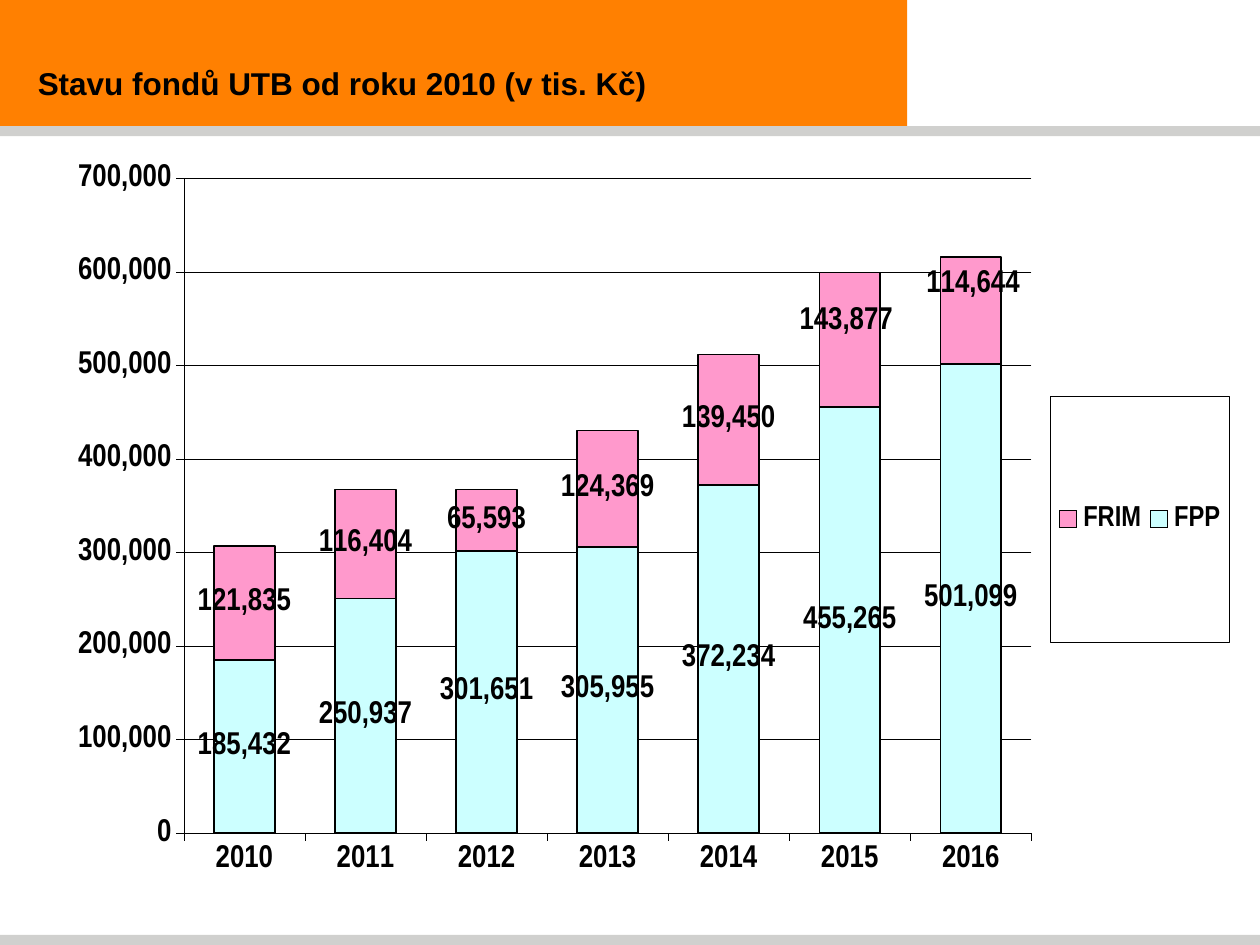
from lxml import etree
from pptx import Presentation
from pptx.chart.data import CategoryChartData
from pptx.dml.color import RGBColor
from pptx.enum import chart as ch, shapes, text
from pptx.oxml import parse_xml
from pptx.oxml.ns import nsdecls
from pptx.util import Inches, Pt

HUES = {"orange": "FF8001", "grey": "D0D0CE", "black": "000000",
        "aqua": "CCFFFF", "pink": "FF99CC"}


def style(font, size, name="Arial Narrow"):
    font.size, font.name, font.bold = Pt(size), name, True
    font.color.rgb = RGBColor.from_string(HUES["black"])


def layout(x, y, w=None, h=None, inner=False):
    """Manual chart layout; without a size, x and y are offsets."""
    tags = [("layoutTarget", "inner")] if inner else []
    if w:
        tags += [("xMode", "edge"), ("yMode", "edge")]
    tags += [("x", x), ("y", y)]
    if w:
        tags += [("w", w), ("h", h)]
    body = "".join(f'<c:{tag} val="{val}"/>' for tag, val in tags)
    return parse_xml(f'<c:layout {nsdecls("c")}><c:manualLayout>{body}'
                     '</c:manualLayout></c:layout>')


prs = Presentation()
prs.slide_width, prs.slide_height = Inches(10), Inches(7.5)
slide = prs.slides.add_slide(prs.slide_layouts[6])

# Header block and grey rules
for top, wide, high, hue in [(0, 7.2, 1, "orange"), (7.42, 10, 0.08, "grey"),
                             (1, 10, 0.08, "grey")]:
    bar = slide.shapes.add_shape(shapes.MSO_SHAPE.RECTANGLE, 0, Inches(top),
                                 Inches(wide), Inches(high))
    bar.shadow.inherit = False
    bar.fill.solid()
    bar.fill.fore_color.rgb = RGBColor.from_string(HUES[hue])
    bar.line.fill.background()

# Title
box = slide.shapes.add_textbox(0, Inches(0.32), Inches(7.2), Inches(0.68))
frame = box.text_frame
frame.word_wrap = True
frame.vertical_anchor = text.MSO_ANCHOR.MIDDLE
frame.margin_left = Inches(0.3)
frame.text = "Stavu fondů UTB od roku 2010 (v tis. Kč)"
style(frame.paragraphs[0].runs[0].font, 18, "Arial")

# Stacked column chart
data = CategoryChartData(number_format="#,##0")
data.categories = [str(year) for year in range(2010, 2017)]
data.add_series("FPP", [185432, 250937, 301651, 305955, 372234, 455265, 501099])
data.add_series("FRIM", [121835, 116404, 65593, 124369, 139450, 143877, 114644])
chart = slide.shapes.add_chart(
    ch.XL_CHART_TYPE.COLUMN_STACKED, Inches(0.48), Inches(1.3),
    Inches(9.42), Inches(5.95), data).chart
chart.has_title = False
style(chart.font, 18)
area = chart._chartSpace.chart.plotArea
for old in area.findall("{*}layout"):
    area.remove(old)
area.insert(0, layout(0.104, 0.019, 0.714, 0.874, inner=True))

# Axes
vals, cats = chart.value_axis, chart.category_axis
vals.minimum_scale, vals.maximum_scale, vals.major_unit = 0, 700000, 100000
vals.has_major_gridlines = True
vals.tick_labels.number_format = "#,##0"
vals.tick_labels.number_format_is_linked = False
cats.tick_label_position = ch.XL_TICK_LABEL_POSITION.LOW
for axis in (vals, cats):
    axis.major_tick_mark = ch.XL_TICK_MARK.OUTSIDE
    style(axis.tick_labels.font, 18)
for line in (vals.format.line, cats.format.line, vals.major_gridlines.format.line):
    line.width = Pt(0.25)
    line.color.rgb = RGBColor.from_string(HUES["black"])

# Series and value labels
plot = chart.plots[0]
plot.gap_width, plot.overlap, plot.vary_by_categories = 100, 100, False
for series, hue in zip(plot.series, ("aqua", "pink")):
    series.format.fill.solid()
    series.format.fill.fore_color.rgb = RGBColor.from_string(HUES[hue])
    series.format.line.width = Pt(1)
    series.format.line.color.rgb = RGBColor.from_string(HUES["black"])
    labels = series.data_labels
    labels.show_value = True
    labels.number_format, labels.number_format_is_linked = "#,##0", False
    style(labels.font, 18)

# The last two upper labels are raised
frim = plot.series[1]
for spot, x, y in [(5, -0.003, -0.025), (6, 0.002, -0.035)]:
    label = frim.points[spot].data_label
    style(label.font, 18)
    node = frim.data_labels._element.findall("{*}dLbl")[spot - 5]
    node.insert(1, layout(x, y))

# Legend
chart.has_legend = True
legend = chart.legend
legend.position = ch.XL_LEGEND_POSITION.RIGHT
legend.include_in_layout = False
style(legend.font, 16.5)
root = legend._element
for old in root.findall("{*}layout"):
    root.remove(old)
root.find("{*}legendPos").addnext(layout(0.834, 0.31, 0.151, 0.328))
edge = parse_xml(f'<c:spPr {nsdecls("c", "a")}><a:ln w="3175"><a:solidFill>'
                 f'<a:srgbClr val="{HUES["black"]}"/></a:solidFill></a:ln></c:spPr>')
root.find("{*}txPr").addprevious(edge)

prs.save("out.pptx")
